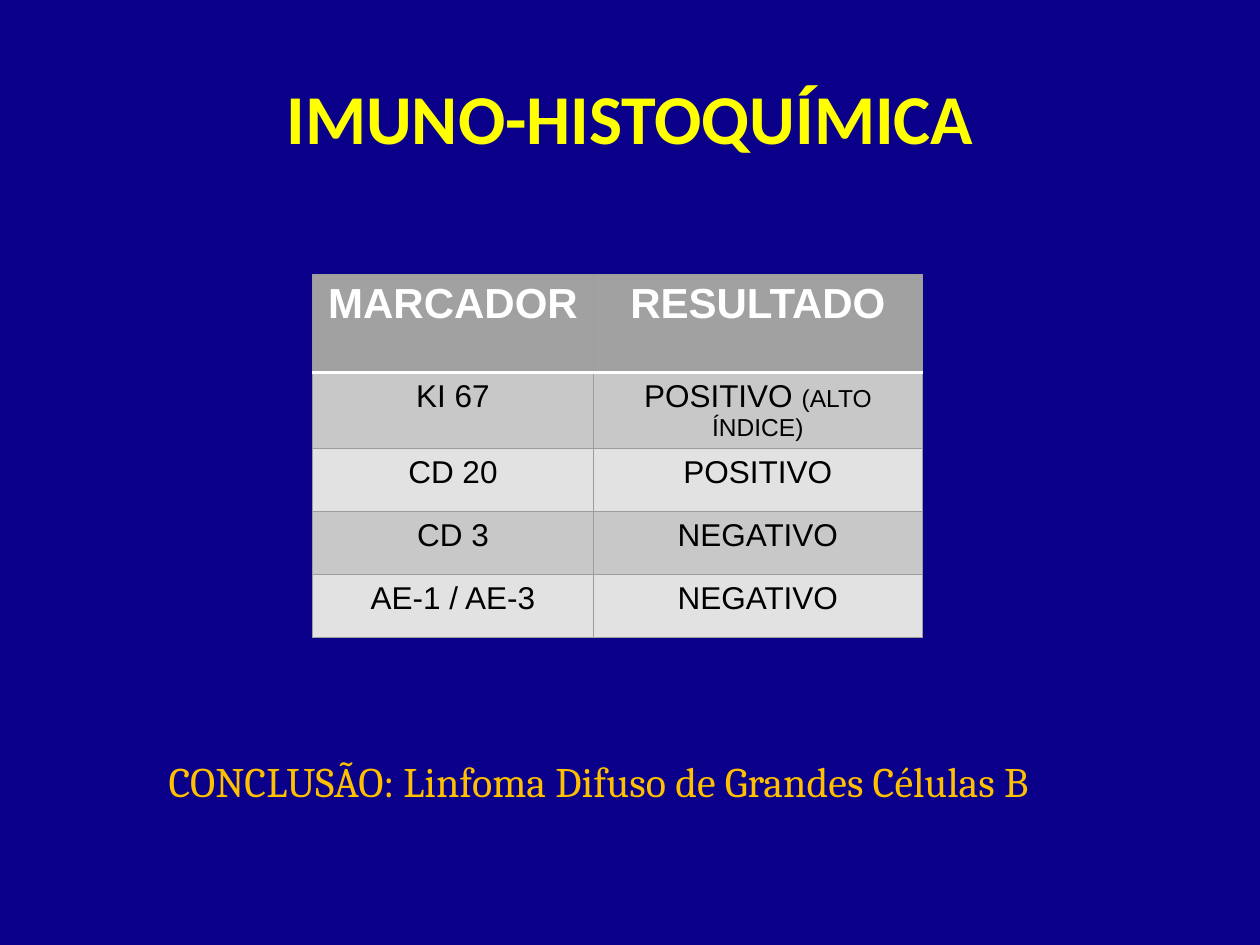
from dataclasses import dataclass

from lxml import etree
from pptx import Presentation
from pptx.dml.color import RGBColor
from pptx.enum.text import MSO_ANCHOR, MSO_AUTO_SIZE, PP_ALIGN
from pptx.oxml.ns import qn
from pptx.util import Inches, Pt

CENTER = PP_ALIGN.CENTER
MIDDLE = MSO_ANCHOR.MIDDLE
GROW = MSO_AUTO_SIZE.SHAPE_TO_FIT_TEXT

COLORS = {
    "background": "0A008A", "title": "FFFF00", "conclusion": "FFC000",
    "header": "A1A1A1", "band": "C8C8C8", "plain": "E2E2E2",
    "border": "9D9D9D", "white": "FFFFFF", "black": "000000",
}
COL_WIDTHS = (2.23, 2.61)
ROW_HEIGHTS = (0.78, 0.48, 0.5, 0.5, 0.5)


@dataclass
class Result:
    marker: str
    outcome: str
    note: str = ""


RESULTS = [
    Result("KI 67", "POSITIVO ", "(ALTO ÍNDICE)"),
    Result("CD 20", "POSITIVO"),
    Result("CD 3", "NEGATIVO"),
    Result("AE-1 / AE-3", "NEGATIVO"),
]


def rgb(name: str) -> RGBColor:
    return RGBColor.from_string(COLORS[name])


def style_run(r, font: str, size: int, color: str, bold: bool = False) -> None:
    r.font.name = font
    r.font.size = Pt(size)
    r.font.bold = bold
    r.font.color.rgb = rgb(color)


def set_border(cell, side: str, color: str, width: float) -> None:
    ln = etree.SubElement(cell._tc.get_or_add_tcPr(), qn(f"a:ln{side}"), w=str(Pt(width)))
    fill = etree.SubElement(ln, qn("a:solidFill"))
    etree.SubElement(fill, qn("a:srgbClr"), val=COLORS[color])


def fill_cell(cell, text: str, note: str, row: int) -> None:
    header = row == 0
    # Borders come before the fill in the cell properties
    for side in "LRTB":
        rule = (header and side == "B") or (row == 1 and side == "T")
        set_border(cell, side, "white" if rule else "border", 2 if rule else 0.75)
    cell.fill.solid()
    cell.fill.fore_color.rgb = rgb("header" if header else "band" if row % 2 else "plain")
    p = cell.text_frame.paragraphs[0]
    p.text = text
    p.alignment = CENTER
    style_run(p.runs[0], "Arial", 24 if header else 18, "white" if header else "black", header)
    if note:
        r = p.add_run()
        r.text = note
        style_run(r, "Arial", 14, "black")


def add_results(slide, results: list[Result]) -> None:
    rows = [Result("MARCADOR", "RESULTADO"), *results]
    table = slide.shapes.add_table(
        len(rows), len(COL_WIDTHS), Inches(2.48), Inches(2.18),
        Inches(sum(COL_WIDTHS)), Inches(sum(ROW_HEIGHTS))).table
    for column, width in zip(table.columns, COL_WIDTHS):
        column.width = Inches(width)
    for i, (result, height) in enumerate(zip(rows, ROW_HEIGHTS)):
        table.rows[i].height = Inches(height)
        fill_cell(table.cell(i, 0), result.marker, "", i)
        fill_cell(table.cell(i, 1), result.outcome, result.note, i)


def main() -> None:
    prs = Presentation()
    prs.slide_width, prs.slide_height = Inches(10), Inches(7.5)
    slide = prs.slides.add_slide(prs.slide_layouts[5])
    slide.background.fill.solid()
    slide.background.fill.fore_color.rgb = rgb("background")

    # Title
    title = slide.shapes.title
    title.left, title.top = Inches(0.5), Inches(0.3)
    title.width, title.height = Inches(9), Inches(1.25)
    tf = title.text_frame
    tf.text = "IMUNO-HISTOQUÍMICA"
    tf.vertical_anchor = MIDDLE
    tf.paragraphs[0].alignment = CENTER
    style_run(tf.paragraphs[0].runs[0], "Calibri", 40, "title", True)

    # Marker table
    add_results(slide, RESULTS)

    # Conclusion
    box = slide.shapes.add_textbox(Inches(1.24), Inches(5.95), Inches(7.62), Inches(0.5))
    tf = box.text_frame
    tf.word_wrap = True
    tf.auto_size = GROW
    tf.text = "CONCLUSÃO: Linfoma Difuso de Grandes Células B"
    style_run(tf.paragraphs[0].runs[0], "Cambria", 24, "conclusion")

    prs.save("out.pptx")


if __name__ == "__main__":
    main()
